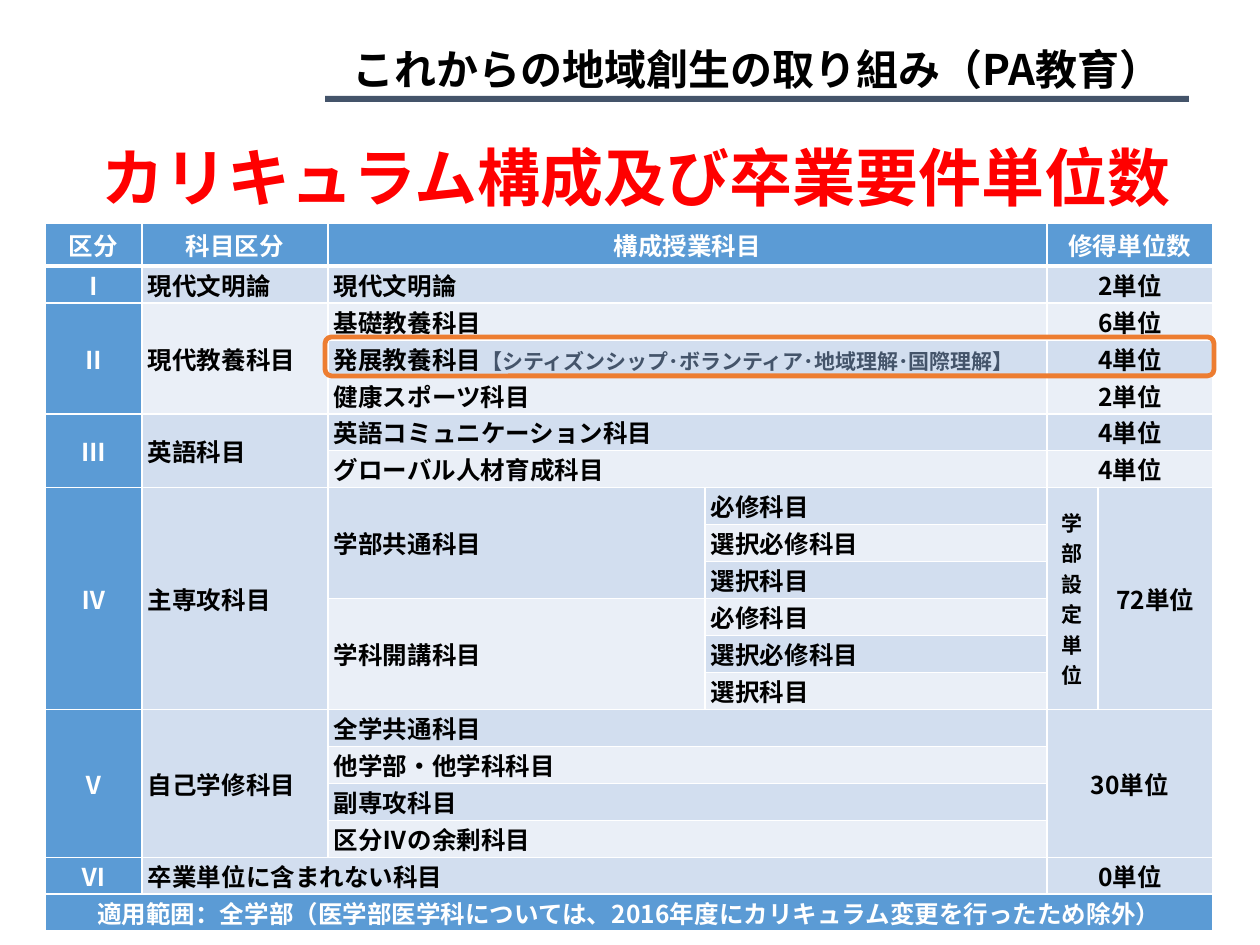
import pptx
import pptx.util
import pptx.dml.color
import pptx.enum.shapes
import pptx.enum.text
import pptx.oxml.ns
import lxml.etree

RGBColor = pptx.dml.color.RGBColor
ALIGN = pptx.enum.text.PP_ALIGN
MIDDLE = pptx.enum.text.MSO_ANCHOR.MIDDLE
SHAPE = pptx.enum.shapes.MSO_SHAPE
qn = pptx.oxml.ns.qn

BLACK = RGBColor(0x00, 0x00, 0x00)
WHITE = RGBColor(0xFF, 0xFF, 0xFF)
RED = RGBColor(0xFF, 0x00, 0x00)
SLATE = RGBColor(0x44, 0x54, 0x6A)
BLUE = RGBColor(0x5B, 0x9B, 0xD5)
BAND_DARK = RGBColor(0xD2, 0xDE, 0xEF)
BAND_LIGHT = RGBColor(0xEA, 0xEF, 0xF7)
ORANGE = RGBColor(0xED, 0x7D, 0x31)

FONT = "Noto Sans CJK JP"
PX_PER_INCH = 126
COL_WIDTHS = [97, 186, 377, 342, 51, 115]
HEADER_HEIGHT = 43
ROW_HEIGHT = 37
ROW_COUNT = 19
LAST_ROW = ROW_COUNT - 1

CELLS = [
    (0, 0, 1, 1, "区分"),
    (0, 1, 1, 1, "科目区分"),
    (0, 2, 1, 2, "構成授業科目"),
    (0, 4, 1, 2, "修得単位数"),
    (1, 0, 1, 1, "Ⅰ"),
    (1, 1, 1, 1, "現代文明論"),
    (1, 2, 1, 2, "現代文明論"),
    (1, 4, 1, 2, "2単位"),
    (2, 0, 3, 1, "Ⅱ"),
    (2, 1, 3, 1, "現代教養科目"),
    (2, 2, 1, 2, "基礎教養科目"),
    (2, 4, 1, 2, "6単位"),
    (3, 2, 1, 2, "発展教養科目"),
    (3, 4, 1, 2, "4単位"),
    (4, 2, 1, 2, "健康スポーツ科目"),
    (4, 4, 1, 2, "2単位"),
    (5, 0, 2, 1, "Ⅲ"),
    (5, 1, 2, 1, "英語科目"),
    (5, 2, 1, 2, "英語コミュニケーション科目"),
    (5, 4, 1, 2, "4単位"),
    (6, 2, 1, 2, "グローバル人材育成科目"),
    (6, 4, 1, 2, "4単位"),
    (7, 0, 6, 1, "Ⅳ"),
    (7, 1, 6, 1, "主専攻科目"),
    (7, 2, 3, 1, "学部共通科目"),
    (7, 3, 1, 1, "必修科目"),
    (7, 4, 6, 1, "学部設定単位"),
    (7, 5, 6, 1, "72単位"),
    (8, 3, 1, 1, "選択必修科目"),
    (9, 3, 1, 1, "選択科目"),
    (10, 2, 3, 1, "学科開講科目"),
    (10, 3, 1, 1, "必修科目"),
    (11, 3, 1, 1, "選択必修科目"),
    (12, 3, 1, 1, "選択科目"),
    (13, 0, 4, 1, "Ⅴ"),
    (13, 1, 4, 1, "自己学修科目"),
    (13, 2, 1, 2, "全学共通科目"),
    (13, 4, 4, 2, "30単位"),
    (14, 2, 1, 2, "他学部・他学科科目"),
    (15, 2, 1, 2, "副専攻科目"),
    (16, 2, 1, 2, "区分Ⅳの余剰科目"),
    (17, 0, 1, 1, "Ⅵ"),
    (17, 1, 1, 3, "卒業単位に含まれない科目"),
    (17, 4, 1, 2, "0単位"),
    (18, 0, 1, 6, "適用範囲：全学部（医学部医学科については、2016年度にカリキュラム変更を行ったため除外）"),
]
COL_ALIGN = [ALIGN.CENTER, ALIGN.JUSTIFY, ALIGN.LEFT, ALIGN.LEFT, ALIGN.CENTER, ALIGN.CENTER]
VERTICAL_CELL = (7, 4)
THEMES_CELL = (3, 2)
THEMES = "【シティズンシップ･ボランティア･地域理解･国際理解】"


def px(n):
    return pptx.util.Emu(round(n * 914400 / PX_PER_INCH))


def add_text(p, text, size=14, color=BLACK, align=None, spacing=None):
    r = p.add_run()
    r.text = text
    r.font.size = pptx.util.Pt(size)
    r.font.bold = True
    r.font.color.rgb = color
    r.font.name = FONT
    ea = lxml.etree.SubElement(r.font._element, qn("a:ea"))
    ea.set("typeface", FONT)
    if align is not None:
        p.alignment = align
    if spacing is not None:
        p.line_spacing = spacing


def add_heading(slide, x, y, w, h, text, size, color):
    sp = slide.shapes.add_textbox(px(x), px(y), px(w), px(h))
    tf = sp.text_frame
    tf.word_wrap = True
    tf.vertical_anchor = MIDDLE
    add_text(tf.paragraphs[0], text, size=size, color=color, align=ALIGN.CENTER, spacing=0.9)


def add_title(slide, x, y, w):
    sp = slide.shapes.add_shape(SHAPE.RECTANGLE, px(x), px(y + 68), px(w), px(6))
    sp.shadow.inherit = False
    sp.fill.solid()
    sp.fill.fore_color.rgb = SLATE
    sp.line.fill.background()
    add_heading(slide, x, y, w, 88, "これからの地域創生の取り組み（PA教育）", 24, BLACK)


def set_borders(cell, bottom):
    tcPr = cell._tc.get_or_add_tcPr()
    for i, (side, width) in enumerate([("L", 1), ("R", 1), ("T", 1), ("B", bottom)]):
        ln = lxml.etree.Element(qn(f"a:ln{side}"), w=str(pptx.util.Pt(width)))
        fill = lxml.etree.SubElement(ln, qn("a:solidFill"))
        lxml.etree.SubElement(fill, qn("a:srgbClr"), val=str(WHITE))
        tcPr.insert(i, ln)


def fill_cell(table, row, col, row_span, col_span, text):
    cell = table.cell(row, col)
    if row_span * col_span > 1:
        cell.merge(table.cell(row + row_span - 1, col + col_span - 1))
    banner = row in (0, LAST_ROW)
    heading = banner or col == 0
    fill = BLUE if heading else BAND_DARK if row % 2 else BAND_LIGHT
    for r in range(row, row + row_span):
        for c in range(col, col + col_span):
            part = table.cell(r, c)
            part.fill.solid()
            part.fill.fore_color.rgb = fill
            set_borders(part, 3 if row == 0 else 1)
    cell.vertical_anchor = MIDDLE
    cell.margin_left = cell.margin_right = px(6)
    cell.margin_top = cell.margin_bottom = 0
    vertical = (row, col) == VERTICAL_CELL
    if vertical:
        cell._tc.get_or_add_tcPr().set("vert", "eaVert")
    p = cell.text_frame.paragraphs[0]
    add_text(p, text, size=12 if vertical else 14, color=WHITE if heading else BLACK,
             align=ALIGN.CENTER if banner else COL_ALIGN[col])
    if (row, col) == THEMES_CELL:
        add_text(p, THEMES, size=12, color=SLATE)


def add_curriculum(slide, x, y):
    heights = [HEADER_HEIGHT] + [ROW_HEIGHT] * (ROW_COUNT - 1)
    table = slide.shapes.add_table(ROW_COUNT, len(COL_WIDTHS), px(x), px(y),
                                   px(sum(COL_WIDTHS)), px(sum(heights))).table
    for column, width in zip(table.columns, COL_WIDTHS):
        column.width = px(width)
    for row, height in zip(table.rows, heights):
        row.height = px(height)
    for entry in CELLS:
        fill_cell(table, *entry)

    left = sum(COL_WIDTHS[:2])
    top = sum(heights[:THEMES_CELL[0]])
    sp = slide.shapes.add_shape(SHAPE.ROUNDED_RECTANGLE, px(x + left - 3), px(y + top - 3),
                                px(sum(COL_WIDTHS[2:]) + 4), px(ROW_HEIGHT + 2))
    sp.shadow.inherit = False
    sp.fill.background()
    sp.line.color.rgb = ORANGE
    sp.line.width = pptx.util.Pt(2.75)


def main():
    prs = pptx.Presentation()
    prs.slide_width = px(1260)
    prs.slide_height = px(945)
    slide = prs.slides.add_slide(prs.slide_layouts[6])
    add_title(slide, 325, 28, 864)
    add_heading(slide, 57, 123, 1158, 116, "カリキュラム構成及び卒業要件単位数", 36, RED)
    add_curriculum(slide, 45, 223)
    prs.save("out.pptx")


if __name__ == "__main__":
    main()
